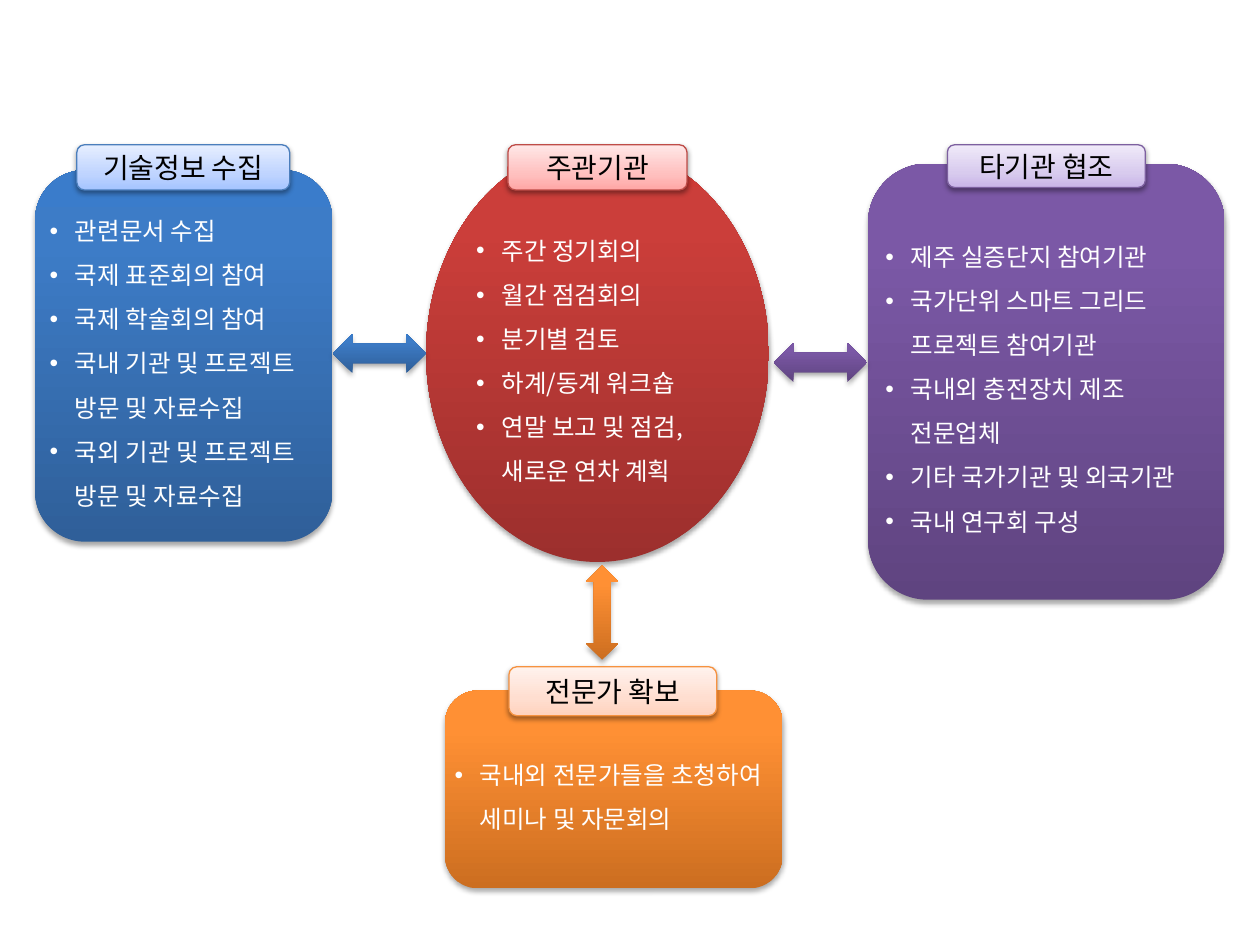
import copy
from dataclasses import dataclass

import lxml.etree
import pptx
import pptx.dml.color
import pptx.enum.shapes
import pptx.enum.text
import pptx.oxml.ns
import pptx.util

Cm = pptx.util.Cm
Pt = pptx.util.Pt
RGBColor = pptx.dml.color.RGBColor
SHAPE = pptx.enum.shapes.MSO_SHAPE
ALIGN = pptx.enum.text.PP_ALIGN
ANCHOR = pptx.enum.text.MSO_ANCHOR
qn = pptx.oxml.ns.qn

FONT = "Noto Sans CJK KR"
WHITE = RGBColor(0xFF, 0xFF, 0xFF)
BLACK = RGBColor(0x00, 0x00, 0x00)
INDENT = Cm(0.51)
PANEL_STOPS = (0, 0.8, 1)
LABEL_STOPS = (0, 0.35, 1)


@dataclass
class Theme:
    panel: tuple
    label: tuple
    border: RGBColor


RED = Theme(
    (RGBColor(0x9C, 0x2F, 0x2D), RGBColor(0xCB, 0x3E, 0x3A), RGBColor(0xCE, 0x3B, 0x37)),
    (RGBColor(0xFF, 0xA6, 0xA5), RGBColor(0xFF, 0xC0, 0xBF), RGBColor(0xFF, 0xE7, 0xE7)),
    RGBColor(0xBF, 0x4C, 0x48),
)
BLUE = Theme(
    (RGBColor(0x2F, 0x5F, 0x99), RGBColor(0x3D, 0x7C, 0xC7), RGBColor(0x3A, 0x7C, 0xCB)),
    (RGBColor(0xA4, 0xC4, 0xFF), RGBColor(0xBF, 0xD4, 0xFF), RGBColor(0xE6, 0xEE, 0xFF)),
    RGBColor(0x4B, 0x7E, 0xBC),
)
PURPLE = Theme(
    (RGBColor(0x5F, 0x44, 0x80), RGBColor(0x7B, 0x58, 0xA6), RGBColor(0x7C, 0x57, 0xA8)),
    (RGBColor(0xC9, 0xB5, 0xE8), RGBColor(0xD8, 0xCB, 0xEE), RGBColor(0xF0, 0xEA, 0xF9)),
    RGBColor(0x7D, 0x60, 0xA0),
)
ORANGE = Theme(
    (RGBColor(0xCC, 0x6E, 0x20), RGBColor(0xFF, 0x90, 0x34), RGBColor(0xFF, 0x91, 0x36)),
    (RGBColor(0xFF, 0xD2, 0xBD), RGBColor(0xFF, 0xDE, 0xD0), RGBColor(0xFF, 0xF2, 0xED)),
    RGBColor(0xF6, 0x92, 0x40),
)

GROUPS = [
    (RED, SHAPE.OVAL, (8.59, 2.92, 6.91, 8.41), (10.24, 2.92, 3.61, 0.91), "주관기관",
     ["주간 정기회의", "월간 점검회의", "분기별 검토", "하계/동계 워크숍",
      "연말 보고 및 점검, 새로운 연차 계획"]),
    (BLUE, SHAPE.ROUNDED_RECTANGLE, (0.71, 3.43, 5.99, 7.49), (1.55, 2.92, 4.29, 0.91),
     "기술정보 수집",
     ["관련문서 수집", "국제 표준회의 참여", "국제 학술회의 참여",
      "국내 기관 및 프로젝트 방문 및 자료수집", "국외 기관 및 프로젝트 방문 및 자료수집"]),
    (PURPLE, SHAPE.ROUNDED_RECTANGLE, (17.5, 3.3, 7.19, 8.79), (19.1, 2.92, 3.99, 0.86),
     "타기관 협조",
     ["제주 실증단지 참여기관", "국가단위 스마트 그리드 프로젝트 참여기관",
      "국내외 충전장치 제조 전문업체", "기타 국가기관 및 외국기관", "국내 연구회 구성"]),
    (ORANGE, SHAPE.ROUNDED_RECTANGLE, (8.97, 13.92, 6.81, 3.99), (10.26, 13.44, 4.19, 0.99),
     "전문가 확보", ["국내외 전문가들을 초청하여 세미나 및 자문회의"]),
]

ARROWS = [
    (BLUE, SHAPE.LEFT_RIGHT_ARROW, (6.71, 6.73, 1.88, 0.79)),
    (PURPLE, SHAPE.LEFT_RIGHT_ARROW, (15.6, 6.91, 1.88, 0.79)),
    (ORANGE, SHAPE.UP_DOWN_ARROW, (11.81, 11.4, 0.66, 1.9)),
]


def set_gradient(shape, colors, positions):
    shape.fill.gradient()
    shape.fill.gradient_angle = 90
    stop_list = shape._element.spPr.find(".//" + qn("a:gsLst"))
    stop_list.append(copy.deepcopy(stop_list[0]))
    for stop, color, position in zip(shape.fill.gradient_stops, colors, positions):
        stop.color.rgb = color
        stop.position = position


def set_shadow(shape, distance, opacity):
    shape.shadow.inherit = False
    effects = shape._element.spPr.find(qn("a:effectLst"))
    shadow = lxml.etree.SubElement(
        effects, qn("a:outerShdw"), blurRad=str(Pt(3.1)), dist=str(Pt(distance)),
        dir="5400000", rotWithShape="0")
    color = lxml.etree.SubElement(shadow, qn("a:srgbClr"), val=str(BLACK))
    lxml.etree.SubElement(color, qn("a:alpha"), val=str(opacity * 1000))


def add_glossy_shape(slide, kind, box, colors, positions, distance, opacity):
    shape = slide.shapes.add_shape(kind, *map(Cm, box))
    set_gradient(shape, colors, positions)
    shape.line.fill.background()
    set_shadow(shape, distance, opacity)
    return shape


def add_solid(slide, kind, box, theme):
    return add_glossy_shape(slide, kind, box, theme.panel, PANEL_STOPS, 1.8, 35)


def prepare_frame(shape):
    frame = shape.text_frame
    frame.word_wrap = True
    frame.vertical_anchor = ANCHOR.MIDDLE
    frame.margin_left = frame.margin_right = 0
    frame.margin_top = frame.margin_bottom = 0
    return frame


def format_runs(paragraph, size, color):
    for run in paragraph.runs:
        run.font.size = Pt(size)
        run.font.name = FONT
        run.font.color.rgb = color
        lxml.etree.SubElement(run.font._element, qn("a:ea"), typeface=FONT)


def add_panel(slide, kind, box, theme, items):
    frame = prepare_frame(add_solid(slide, kind, box, theme))
    frame.text = "\n".join(items)
    for paragraph in frame.paragraphs:
        paragraph.alignment = ALIGN.LEFT
        paragraph.line_spacing = 1.5
        properties = paragraph._p.get_or_add_pPr()
        properties.set("marL", str(INDENT))
        properties.set("indent", str(-INDENT))
        lxml.etree.SubElement(properties, qn("a:buFont"), typeface="Arial")
        lxml.etree.SubElement(properties, qn("a:buChar"), char="•")
        format_runs(paragraph, 14, WHITE)


def add_label(slide, box, theme, text):
    shape = add_glossy_shape(
        slide, SHAPE.ROUNDED_RECTANGLE, box, theme.label, LABEL_STOPS, 1.6, 38)
    shape.line.color.rgb = theme.border
    shape.line.width = Pt(0.75)
    frame = prepare_frame(shape)
    frame.text = text
    paragraph = frame.paragraphs[0]
    paragraph.alignment = ALIGN.CENTER
    format_runs(paragraph, 16, BLACK)


def main():
    presentation = pptx.Presentation()
    presentation.slide_width = Cm(25.4)
    presentation.slide_height = Cm(19.05)
    slide = presentation.slides.add_slide(presentation.slide_layouts[6])
    for theme, kind, panel_box, label_box, title, items in GROUPS:
        add_panel(slide, kind, panel_box, theme, items)
        add_label(slide, label_box, theme, title)
    for theme, kind, box in ARROWS:
        add_solid(slide, kind, box, theme)
    presentation.save("out.pptx")


if __name__ == "__main__":
    main()
